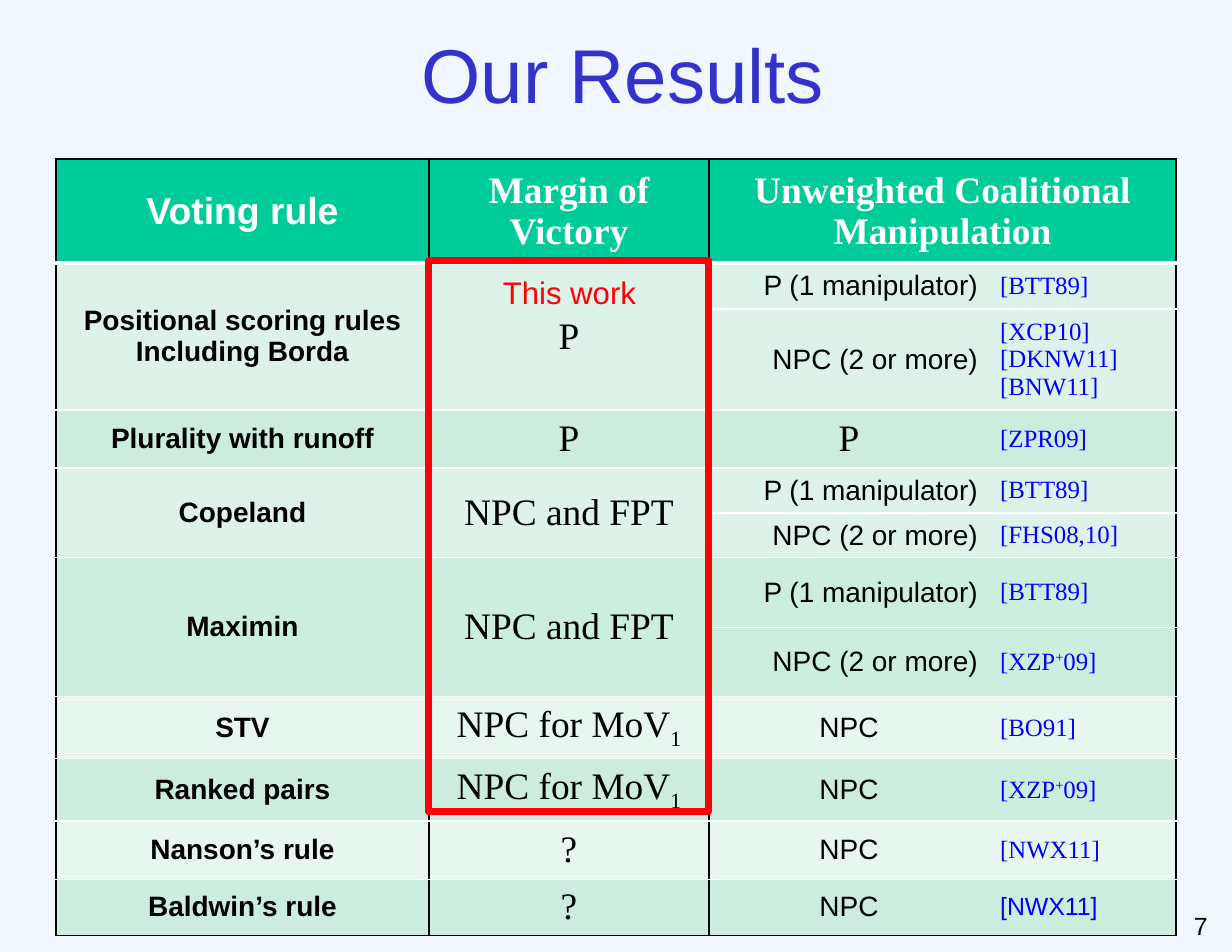
"""Build the results slide comparing voting rules by complexity."""
from lxml import etree
from pptx import Presentation
from pptx import util as u
from pptx.dml.color import RGBColor
from pptx.enum import shapes, text
from pptx.oxml.ns import qn

SANS, SERIF = "Arial", "Times New Roman"
BLACK, WHITE, RED, BLUE = "000000", "FFFFFF", "FF0000", "0000FF"
L, C, R = text.PP_ALIGN.LEFT, text.PP_ALIGN.CENTER, text.PP_ALIGN.RIGHT
BASELINES = {"^": "30000", "_": "-25000"}

STYLES = {
    "head": (SANS, 24, WHITE, True, C),
    "head serif": (SERIF, 24, WHITE, True, C),
    "rule": (SANS, 18, BLACK, True, C),
    "margin": (SERIF, 24, BLACK, False, C),
    "case": (SANS, 18, BLACK, False, R),
    "result": (SANS, 18, BLACK, False, C),
    "cite": (SERIF, 16, BLUE, False, L),
    "cite sans": (SANS, 16, BLUE, False, L),
}
BODY = ("rule", "margin", "result", "cite")
SPLIT = ("rule", "margin", "case", "cite")
ONE, MORE = "P (1 manipulator)", "NPC (2 or more)"
MOV = ("NPC for MoV", "_1")
XZP = ("[XZP", "^+", "09]")

COLUMNS = [3.33, 2.5, 2.5, 1.67]
ROWS = [
    (0.93, "00CC99", ("head", "head serif", "head serif", "head"),
     ("Voting rule", "Margin of Victory", "Unweighted Coalitional Manipulation", None)),
    (0.41, "DDF3EA", SPLIT, (["Positional scoring rules", "Including Borda"], "P", ONE, "[BTT89]")),
    (0.87, "DDF3EA", SPLIT, (None, None, MORE, ["[XCP10]", "[DKNW11]", "[BNW11]"])),
    (0.52, "CCECDE", ("rule", "margin", "margin", "cite"),
     ("Plurality with runoff", "P", "P", "[ZPR09]")),
    (0.39, "DDF3EA", SPLIT, ("Copeland", "NPC and FPT", ONE, "[BTT89]")),
    (0.39, "DDF3EA", SPLIT, (None, None, MORE, "[FHS08,10]")),
    (0.62, "CCEEDF", SPLIT, ("Maximin", "NPC and FPT", ONE, "[BTT89]")),
    (0.62, "CCEEDF", SPLIT, (None, None, MORE, XZP)),
    (0.52, "E7F6EF", BODY, ("STV", MOV, "NPC", "[BO91]")),
    (0.52, "CCECDE", BODY, ("Ranked pairs", MOV, "NPC", XZP)),
    (0.52, "E7F6EF", BODY, ("Nanson’s rule", "?", "NPC", "[NWX11]")),
    (0.47, "CBECDE", ("rule", "margin", "result", "cite sans"),
     ("Baldwin’s rule", "?", "NPC", "[NWX11]")),
]
MERGES = [((0, 2), (0, 3))] + [((r, c), (r + 1, c)) for r in (1, 4, 6) for c in (0, 1)]


def rgb(value):
    return RGBColor.from_string(value)


def box(left, top, width, height):
    return [u.Inches(v) for v in (left, top, width, height)]


def write(tf, content, style, spacing=None):
    font, size, color, bold, align = style
    paragraphs = content if isinstance(content, list) else [content]
    for i, runs in enumerate(paragraphs):
        p = tf.add_paragraph() if i else tf.paragraphs[0]
        p.alignment = align
        if spacing:
            p.line_spacing = spacing
        for piece in (runs if isinstance(runs, tuple) else (runs,)):
            r = p.add_run()
            baseline = BASELINES.get(piece[0])
            r.text = piece[1:] if baseline else piece
            r.font.name, r.font.size, r.font.bold = font, u.Pt(size), bold
            r.font.color.rgb = rgb(color)
            if baseline:
                r._r.get_or_add_rPr().set("baseline", baseline)


def set_borders(cell, row, col):
    last = len(ROWS) - 1
    edges = {
        "lnL": (None if col == 3 and row else BLACK, 1),
        "lnR": (None if col == 2 and row else BLACK, 1),
        "lnT": (WHITE if row else BLACK, 3 if row == 1 else 1),
        "lnB": (BLACK if row == last else WHITE, 1 if row else 3),
    }
    props = cell._tc.get_or_add_tcPr()
    for i, (tag, (color, width)) in enumerate(edges.items()):
        ln = etree.Element(qn(f"a:{tag}"), w=str(u.Pt(width)))
        if color:
            fill = etree.SubElement(ln, qn("a:solidFill"))
            etree.SubElement(fill, qn("a:srgbClr"), val=color)
        else:
            etree.SubElement(ln, qn("a:noFill"))
        props.insert(i, ln)


def add_results(s):
    frame = s.shapes.add_table(len(ROWS), len(COLUMNS),
                               *box(0.5, 1.42, sum(COLUMNS), sum(row[0] for row in ROWS)))
    table = frame.table
    for column, width in zip(table.columns, COLUMNS):
        column.width = u.Inches(width)
    for r, (height, fill, styles, contents) in enumerate(ROWS):
        table.rows[r].height = u.Inches(height)
        for c, (style, content) in enumerate(zip(styles, contents)):
            cell = table.cell(r, c)
            cell.vertical_anchor = text.MSO_ANCHOR.MIDDLE
            cell.fill.solid()
            cell.fill.fore_color.rgb = rgb(fill)
            set_borders(cell, r, c)
            if content:
                write(cell.text_frame, content, STYLES[style])
    for start, end in MERGES:
        table.cell(*start).merge(table.cell(*end))


def add_label(s, place, content, style, spacing=None):
    tf = s.shapes.add_textbox(*box(*place)).text_frame
    tf.word_wrap = True
    write(tf, content, style, spacing)


def main():
    prs = Presentation()
    prs.slide_width, prs.slide_height = u.Inches(11), u.Inches(8.5)
    s = prs.slides.add_slide(prs.slide_layouts[5])
    s.background.fill.solid()
    s.background.fill.fore_color.rgb = rgb("F0F7FF")

    title = s.shapes.title
    title.left, title.top, title.width, title.height = box(0.42, -0.15, 10.28, 1.4)
    title.text_frame.auto_size = text.MSO_AUTO_SIZE.NONE
    title.text_frame.vertical_anchor = text.MSO_ANCHOR.MIDDLE
    write(title.text_frame, "Our Results", (SANS, 49, "3333CC", False, C), 1.24)

    add_label(s, (8.33, 8.08, 2.55, 0.58), "7", (SANS, 16, BLACK, False, R))
    add_results(s)

    highlight = s.shapes.add_shape(shapes.MSO_SHAPE.RECTANGLE, *box(3.83, 2.33, 2.5, 4.92))
    highlight.shadow.inherit = False
    highlight.fill.background()
    highlight.line.color.rgb = rgb(RED)
    highlight.line.width = u.Pt(4.5)
    add_label(s, (4.25, 2.33, 1.67, 0.49), "This work", (SANS, 20, RED, False, C), 1.18)
    prs.save("out.pptx")


if __name__ == "__main__":
    main()
